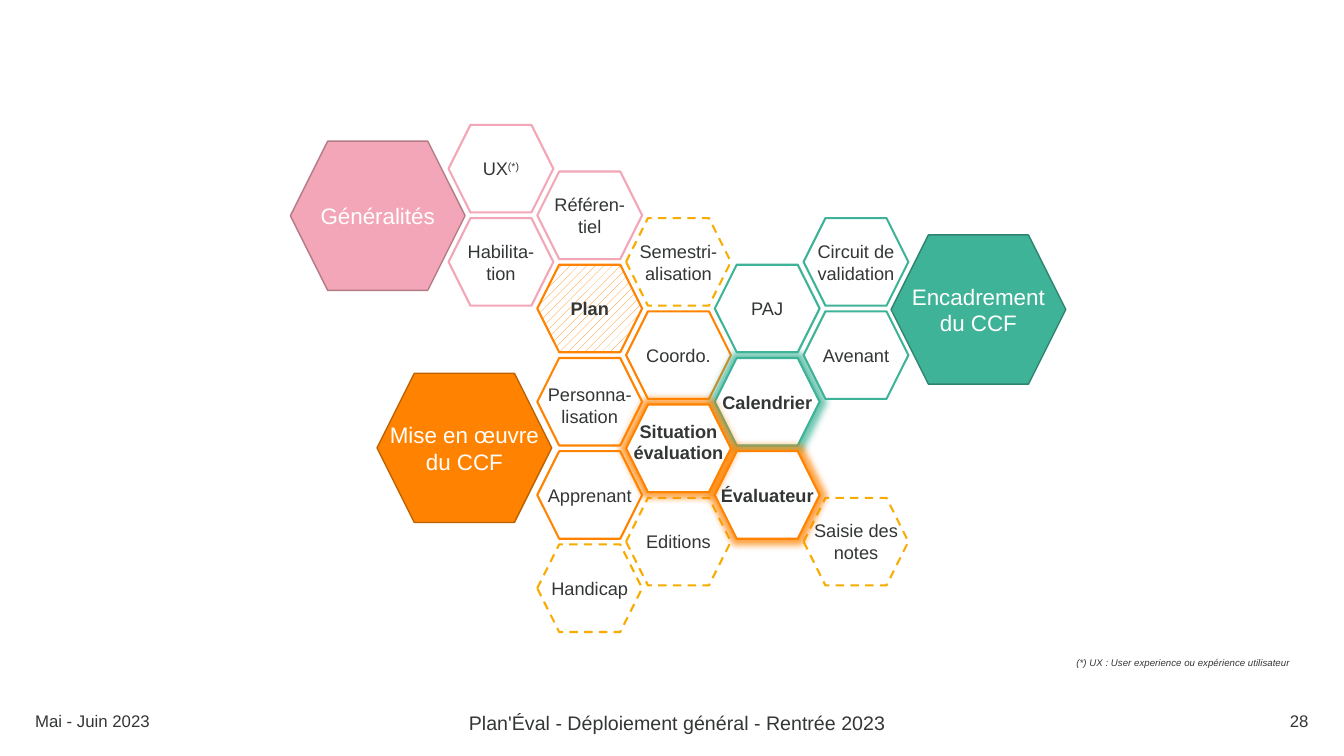
from lxml.etree import SubElement
from pptx import Presentation
from pptx.dml.color import RGBColor
from pptx.enum.dml import MSO_LINE, MSO_PATTERN
from pptx.enum.shapes import MSO_SHAPE
from pptx.enum.text import MSO_ANCHOR, PP_ALIGN
from pptx.oxml.ns import qn
from pptx.util import Pt

PINK, ORANGE, GREEN, AMBER = "F3A6B7", "FF8300", "3FB398", "F8AC00"
WHITE, DARK = "FFFFFF", "343636"


def color(value):
    return RGBColor.from_string(value)


def write(box, pieces, align, insets, wrap, **font_values):
    """Fill a shape with one paragraph of (text, baseline) pieces."""
    frame = box.text_frame
    frame.word_wrap = wrap
    frame.vertical_anchor = MSO_ANCHOR.MIDDLE
    for side, inset in zip(("left", "top", "right", "bottom"), insets):
        setattr(frame, f"margin_{side}", Pt(inset))
    para = frame.paragraphs[0]
    para.alignment = align
    for text, baseline in pieces:
        lines = text.split("\n")
        for number, line in enumerate(lines):
            if number:
                para.add_line_break()
            span = para.add_run()
            span.text = line
            span.font.name = "Arial"
            span.font.color.rgb = color(DARK)
            for name, value in font_values.items():
                if name == "ink":
                    span.font.color.rgb = color(value)
                else:
                    setattr(span.font, name, value)
            if baseline:
                span.font._element.set("baseline", str(baseline))


deck = Presentation()
deck.slide_width, deck.slide_height = Pt(960), Pt(540)
page = deck.slides.add_slide(deck.slide_layouts[6])

footers = [
    ("Mai - Juin 2023", 18, 500.4, 224, PP_ALIGN.LEFT, 12),
    ("Plan'Éval - Déploiement général - Rentrée 2023", 321.8, 501.8, 324,
     PP_ALIGN.CENTER, 14),
    ("28", 725.8, 500.4, 216, PP_ALIGN.RIGHT, 12),
]
for text, left, top, width, align, size in footers:
    box = page.shapes.add_textbox(Pt(left), Pt(top), Pt(width), Pt(28.8))
    write(box, [(text, 0)], align, (7.2, 3.6, 7.2, 3.6), True, size=Pt(size))

themes = [
    ("Généralités", 207.4, 100.8, PINK, "B47B87"),
    ("Mise en œuvre\ndu CCF", 269.3, 266.6, ORANGE, "BD6100"),
    ("Encadrement\ndu CCF", 636.5, 167.8, GREEN, "2F8470"),
]
for text, left, top, fill, outline in themes:
    theme = page.shapes.add_shape(MSO_SHAPE.HEXAGON, Pt(left), Pt(top), Pt(124.8), Pt(106.6))
    theme.shadow.inherit = False
    theme.fill.solid()
    theme.fill.fore_color.rgb = color(fill)
    theme.line.color.rgb = color(outline)
    theme.line.width = Pt(1)
    write(theme, [(text, 0)], PP_ALIGN.CENTER, (3, 3, 3, 3), False, size=Pt(16), ink=WHITE)

# Honeycomb: text, column, half-row, outline, style, downward text shift
COLUMN_STEP, HALF_ROW = 63.4, 33.3
topics = [
    ("Plan", 1, 3, ORANGE, "hatched", 0),
    ("Coordo.", 2, 4, ORANGE, "plain", 0),
    ("Apprenant", 1, 7, ORANGE, "plain", 0),
    ("Calendrier", 3, 5, GREEN, "glowing", 0),
    ("Personna-\nlisation", 1, 5, ORANGE, "plain", 2.5),
    ("Circuit de\nvalidation", 4, 2, GREEN, "plain", 0),
    ("PAJ", 3, 3, GREEN, "plain", 0),
    ("Avenant", 4, 4, GREEN, "plain", 0),
    ("Référen-\ntiel", 1, 1, PINK, "plain", 0),
    ("Habilita-\ntion", 0, 2, PINK, "plain", 0),
    ("UX", 0, 0, PINK, "plain", 0),
    ("Editions", 2, 8, AMBER, "dashed", 0),
    ("Handicap", 1, 9, AMBER, "dashed", 0),
    ("Semestri-\nalisation", 2, 2, AMBER, "open", 0),
    ("Saisie des\nnotes", 4, 8, AMBER, "dashed", 0),
    ("Évaluateur", 3, 7, ORANGE, "glowing", 0),
    ("Situation\névaluation", 2, 6, ORANGE, "glowing", -4.7),
]
for text, column, half_row, outline, style, shift in topics:
    topic = page.shapes.add_shape(
        MSO_SHAPE.HEXAGON, Pt(320.4 + column * COLUMN_STEP),
        Pt(89.2 + half_row * HALF_ROW), Pt(74.9), Pt(62.6))
    topic.shadow.inherit = False
    if style == "hatched":
        topic.fill.patterned()
        topic.fill.pattern = MSO_PATTERN.PERCENT_20
        topic.fill.fore_color.rgb = color(ORANGE)
        topic.fill.back_color.rgb = color(WHITE)
    elif style == "open":
        topic.fill.background()
    else:
        topic.fill.solid()
        topic.fill.fore_color.rgb = color(WHITE)
    topic.line.color.rgb = color(outline)
    topic.line.width = Pt(1.5)
    if style in ("dashed", "open"):
        topic.line.dash_style = MSO_LINE.DASH
    if style == "glowing":
        effects = topic._element.spPr.find(qn("a:effectLst"))
        glow = SubElement(effects, qn("a:outerShdw"), blurRad=str(Pt(5)), dist="0",
                          sx="110000", sy="110000", algn="ctr", rotWithShape="0")
        tint = SubElement(glow, qn("a:srgbClr"), val=outline)
        SubElement(tint, qn("a:alpha"), val="75000")
    pieces = [(text, 0)]
    if text == "UX":
        pieces.append(("(*)", 30000))
    insets = (3, 3 + max(2 * shift, 0), 3, 3 + max(-2 * shift, 0))
    write(topic, pieces, PP_ALIGN.CENTER, insets, False, size=Pt(13),
          bold=style in ("hatched", "glowing"))

footnote = page.shapes.add_textbox(Pt(748.8), Pt(466.6), Pt(193), Pt(17.3))
write(footnote, [("(*) UX : User experience ou expérience utilisateur", 30000)],
      PP_ALIGN.CENTER, (3, 3, 3, 3), True, size=Pt(12), italic=True)

deck.save("out.pptx")
